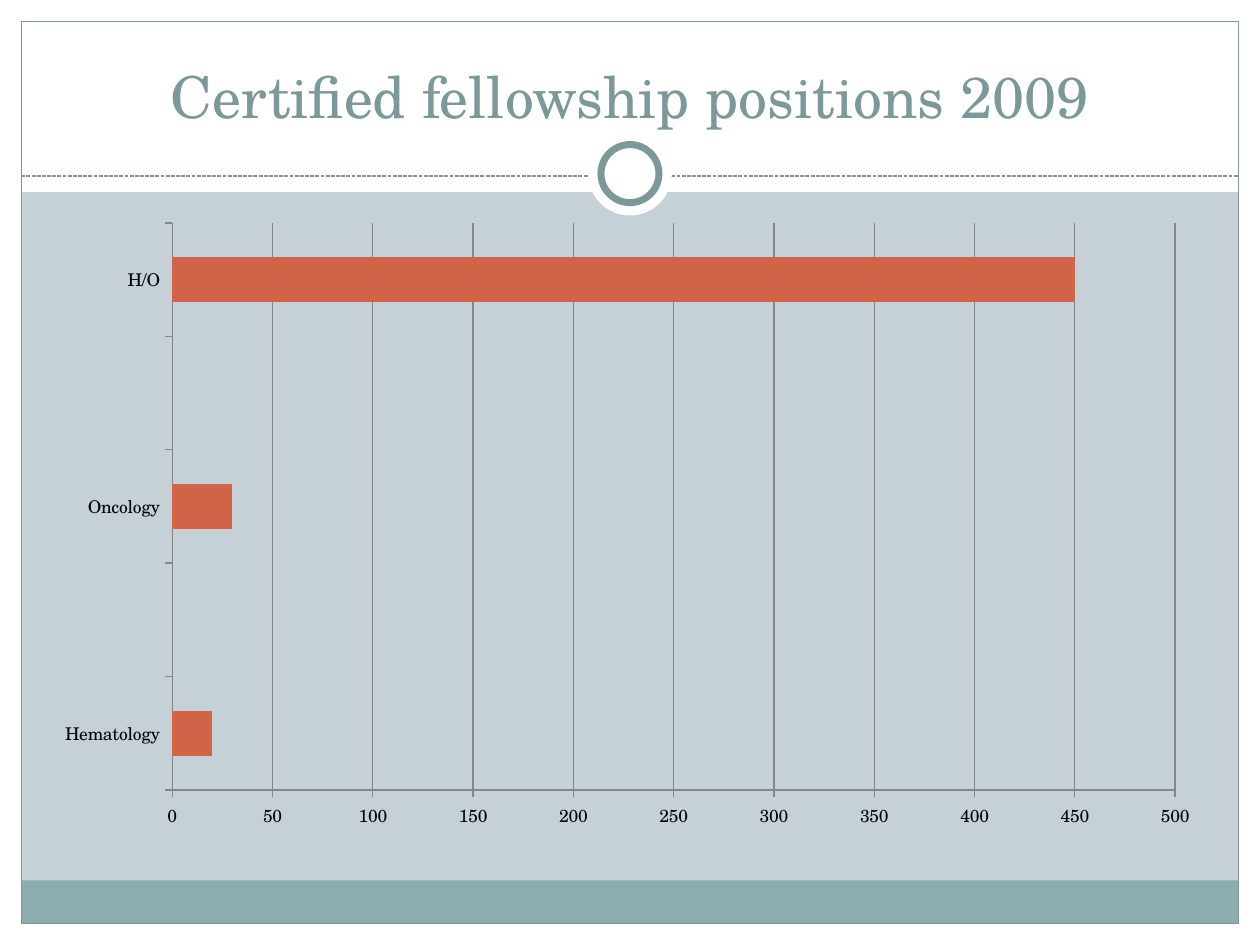
from lxml import etree
from pptx import Presentation
from pptx import util as u
from pptx.chart.data import CategoryChartData
from pptx.dml.color import RGBColor
from pptx.enum import chart as charts, dml, shapes, text
from pptx.oxml import parse_xml
from pptx.oxml.ns import nsdecls, qn

WIDTH, HEIGHT, MARGIN = 25.4, 19.05, 0.43
BOTTOM = HEIGHT - MARGIN
INNER = WIDTH - 2 * MARGIN
CENTRE = (WIDTH / 2, 3.5)
WHITE, TEAL, PALE_TEAL, BACKGROUND = "FFFFFF", "7C999A", "8CADAE", "C5D1D7"
CORAL, GREY, BLACK = "D16349", "868686", "000000"


def colour(value):
    return RGBColor.from_string(value)


def assign(target, values):
    """Set each attribute of target from a dict of format values."""
    for name, value in values.items():
        setattr(target, name, value)


class SlideBuilder:
    font = "TeX Gyre Schola"

    def __init__(self, deck):
        self.page = deck.slides.add_slide(deck.slide_layouts[6])

    def background(self, fill):
        self.page.background.fill.solid()
        self.page.background.fill.fore_color.rgb = colour(fill)

    def stroke(self, line, value, points):
        line.color.rgb = colour(value)
        line.width = u.Pt(points)

    def shape(self, kind, area, fill=None, line=None, points=0.75):
        box = self.page.shapes.add_shape(kind, *map(u.Cm, area))
        box.shadow.inherit = False
        if fill:
            box.fill.solid()
            box.fill.fore_color.rgb = colour(fill)
        else:
            box.fill.background()
        if line:
            self.stroke(box.line, line, points)
        else:
            box.line.fill.background()

    def rectangle(self, area, **style):
        self.shape(shapes.MSO_SHAPE.RECTANGLE, area, **style)

    def circle(self, centre, size, **style):
        left, top = (middle - size / 2 for middle in centre)
        self.shape(shapes.MSO_SHAPE.OVAL, (left, top, size, size), **style)

    def dashed_rule(self, left, right, top):
        rule = self.page.shapes.add_connector(
            shapes.MSO_CONNECTOR.STRAIGHT, u.Cm(left), u.Cm(top), u.Cm(right), u.Cm(top))
        self.stroke(rule.line, TEAL, 0.75)
        rule.line.dash_style = dml.MSO_LINE.SQUARE_DOT
        etree.SubElement(rule.element.spPr, qn("a:effectLst"))

    def title(self, wording, area):
        frame = self.page.shapes.add_textbox(*map(u.Cm, area)).text_frame
        assign(frame, {"word_wrap": True, "vertical_anchor": text.MSO_ANCHOR.BOTTOM})
        para = frame.paragraphs[0]
        para.alignment = text.PP_ALIGN.CENTER
        span = para.add_run()
        span.text = wording
        assign(span.font, {"name": self.font, "size": u.Pt(33)})
        span.font.color.rgb = colour(TEAL)

    def bar_chart(self, area, categories, values, plot_area):
        """Add a bar chart; plot_area gives x, y, w, h as percentages of the chart."""
        data = CategoryChartData()
        data.categories = categories
        data.add_series("Series 1", values)
        chart = self.page.shapes.add_chart(
            charts.XL_CHART_TYPE.BAR_CLUSTERED, *map(u.Cm, area), data).chart
        assign(chart, {"has_legend": False, "has_title": False})
        assign(chart.font, {"name": self.font, "size": u.Pt(10)})
        chart.font.color.rgb = colour(BLACK)

        plot = chart.plots[0]
        assign(plot, {"gap_width": 150, "vary_by_categories": False})
        bars = plot.series[0]
        bars.format.fill.solid()
        bars.format.fill.fore_color.rgb = colour(CORAL)

        for axis, gridlines in ((chart.category_axis, False), (chart.value_axis, True)):
            assign(axis, {"has_major_gridlines": gridlines,
                          "major_tick_mark": charts.XL_TICK_MARK.OUTSIDE,
                          "minor_tick_mark": charts.XL_TICK_MARK.NONE})
            self.stroke(axis.format.line, GREY, 0.75)
        assign(chart.value_axis,
               {"minimum_scale": 0, "maximum_scale": 500, "major_unit": 50})
        self.stroke(chart.value_axis.major_gridlines.format.line, GREY, 0.75)
        self.place_plot(chart, plot_area)

    def place_plot(self, chart, plot_area):
        modes = '<c:xMode val="edge"/><c:yMode val="edge"/>'
        sizes = "".join(f'<c:{name} val="{percent / 100}"/>'
                        for name, percent in zip("xywh", plot_area))
        layout = parse_xml(
            f'<c:layout {nsdecls("c")}><c:manualLayout><c:layoutTarget val="inner"/>'
            f'{modes}{sizes}</c:manualLayout></c:layout>')
        plot_element = chart.element.find(".//" + qn("c:plotArea"))
        for old in plot_element.findall(qn("c:layout")):
            plot_element.remove(old)
        plot_element.insert(0, layout)


def main():
    deck = Presentation()
    assign(deck, {"slide_width": u.Cm(WIDTH), "slide_height": u.Cm(HEIGHT)})
    slide = SlideBuilder(deck)
    slide.background(BACKGROUND)

    for area in ((0, BOTTOM, WIDTH, MARGIN), (0, 0, WIDTH, 3.87),
                 (0, 0, MARGIN, HEIGHT), (WIDTH - MARGIN, 0, MARGIN, HEIGHT)):
        slide.rectangle(area, fill=WHITE)
    slide.rectangle((MARGIN, 17.75, INNER, BOTTOM - 17.75), fill=PALE_TEAL)
    slide.rectangle((MARGIN, MARGIN, INNER, HEIGHT - 2 * MARGIN), line=TEAL)
    slide.dashed_rule(MARGIN, WIDTH - MARGIN, 3.55)
    slide.circle(CENTRE, 1.69, fill=WHITE)
    slide.circle(CENTRE, 1.17, fill=WHITE, line=TEAL, points=4)

    slide.title("Certified fellowship positions 2009", (0.85, 0.62, 23.7, 2.12))
    slide.bar_chart((0.85, 4.23, 23.62, 12.7),
                    ["Hematology", "", "Oncology", "", "H/O"],
                    [20, None, 30, None, 450],
                    (11.1, 2.1, 85.6, 90))
    deck.save("out.pptx")


if __name__ == "__main__":
    main()
